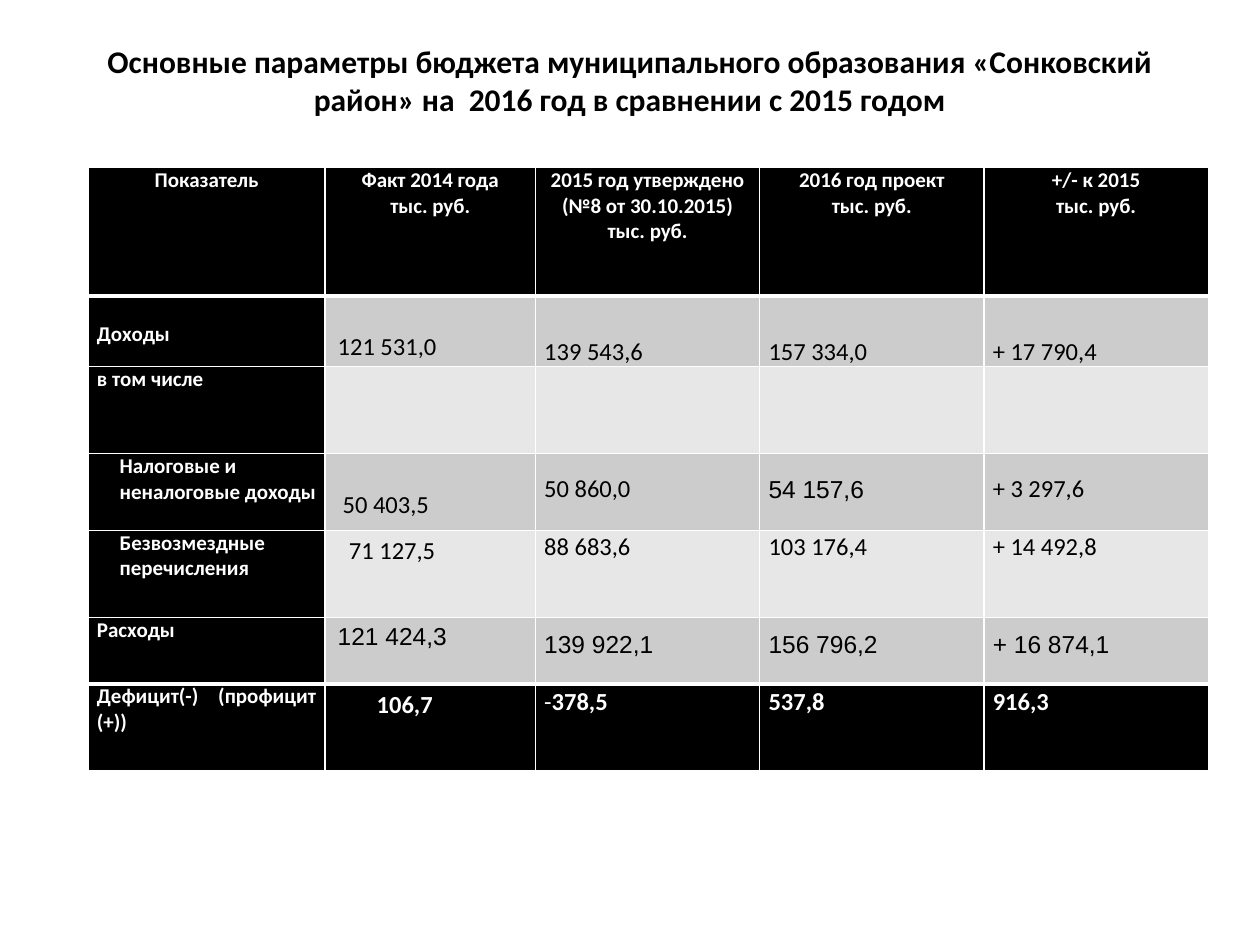
from lxml.etree import SubElement
from pptx import Presentation
from pptx.dml.color import RGBColor
from pptx.enum.text import MSO_ANCHOR as Anchor, PP_ALIGN as Align
from pptx.oxml.ns import qn
from pptx.util import Inches, Pt

COLORS = {"black": "000000", "white": "FFFFFF", "dark_band": "CCCCCC", "light_band": "E7E7E7"}

TITLE = ("Основные параметры бюджета муниципального образования "
         "«Сонковский район» на  2016 год в сравнении с 2015 годом")

# Each header cell is a list of paragraphs; "\n" is a line break
HEADERS = [
    ["Показатель"],
    ["Факт 2014 года\nтыс. руб."],
    ["2015 год утверждено (№8 от 30.10.2015)", "тыс. руб."],
    ["2016 год проект\nтыс. руб."],
    ["+/- к 2015\nтыс. руб."],
]
# Indicator, 2014 fact, 2015 approved, 2016 draft, change
BUDGET = [
    ["Доходы", "121 531,0", "139 543,6", "157 334,0", "+ 17 790,4"],
    ["в том числе", "", "", "", ""],
    ["Налоговые и \nненалоговые доходы", "50 403,5", "50 860,0", "54 157,6", "+ 3 297,6"],
    ["Безвозмездные \nперечисления", "71 127,5", "88 683,6", "103 176,4", "+ 14 492,8"],
    ["Расходы", "121 424,3", "139 922,1", "156 796,2", "+ 16 874,1"],
    ["Дефицит(-) (профицит (+))", "106,7", "378,5", "537,8", "916,3"],
]
COL_WIDTHS = [1.88, 1.67, 1.78, 1.78, 1.78]
ROW_HEIGHTS = [1.02, 0.56, 0.69, 0.61, 0.69, 0.53, 0.69]
TOTAL_ROW = len(BUDGET)
HEAVY_EDGES = {1, TOTAL_ROW}              # row edges drawn at 3 pt
SUBITEM_ROWS = {3, 4}
ARIAL_CELLS = {(3, 3)} | {(5, col) for col in range(1, 5)}
FACT_LEFT = {3: 0.14, 4: 0.19, 6: 0.41}   # left insets of the 2014 column
FACT_TOP = {1: 0.29, 3: 0.29}             # top insets of the 2014 column
PLAN_BOTTOM = {3: 0.21, 4: 0.44, 5: 0.2, 6: 0.43}  # bottom insets, other columns


def rgb(name):
    return RGBColor.from_string(COLORS[name])


def write(paragraph, text, size, color, bold, font="Calibri"):
    for index, line in enumerate(text.split("\n")):
        if index:
            paragraph.add_line_break()
        run = paragraph.add_run()
        run.text = line
        run.font.name, run.font.size, run.font.bold = font, Pt(size), bold
        run.font.color.rgb = rgb(color)


def set_insets(cell, left=0.07, top=0, right=0.07, bottom=0):
    cell.margin_left, cell.margin_top = Inches(left), Inches(top)
    cell.margin_right, cell.margin_bottom = Inches(right), Inches(bottom)


def style_cell(cell, row, fill):
    props = cell._tc.get_or_add_tcPr()
    widths = {"L": 1, "R": 1,
              "T": 3 if row in HEAVY_EDGES else 1,
              "B": 3 if row + 1 in HEAVY_EDGES else 1}
    for side, width in widths.items():
        line = SubElement(props, qn(f"a:ln{side}"), w=str(Pt(width)))
        SubElement(SubElement(line, qn("a:solidFill")), qn("a:srgbClr"), val=COLORS["white"])
    cell.fill.solid()
    cell.fill.fore_color.rgb = rgb(fill)


def add_dash_bullet(paragraph):
    props = paragraph._p.get_or_add_pPr()
    props.set("marL", "0")
    props.set("indent", "0")
    SubElement(props, qn("a:buFont"), typeface="Calibri")
    SubElement(props, qn("a:buChar"), char="-")


def fill_header(cell, paragraphs):
    style_cell(cell, 0, "black")
    set_insets(cell)
    for index, text in enumerate(paragraphs):
        paragraph = cell.text_frame.add_paragraph() if index else cell.text_frame.paragraphs[0]
        paragraph.alignment = Align.CENTER
        write(paragraph, text, 12, "white", True)


def fill_indicator(cell, row, text):
    style_cell(cell, row, "black")
    set_insets(cell, top=0.2 if row == 1 else 0)
    paragraph = cell.text_frame.paragraphs[0]
    if row in SUBITEM_ROWS:
        paragraph._p.get_or_add_pPr().set("marL", str(Inches(0.18)))
    else:
        paragraph.alignment = Align.JUSTIFY
    write(paragraph, text, 12, "white", True)


def fill_amount(cell, row, col, text):
    total = row == TOTAL_ROW
    style_cell(cell, row, "black" if total else "dark_band" if row % 2 else "light_band")
    if not text:
        return
    if col == 1:
        set_insets(cell, FACT_LEFT.get(row, 0.1), FACT_TOP.get(row, 0.05))
    else:
        set_insets(cell, bottom=PLAN_BOTTOM.get(row, 0))
        cell.vertical_anchor = Anchor.BOTTOM
    paragraph = cell.text_frame.paragraphs[0]
    if total and col == 2:
        add_dash_bullet(paragraph)
    write(paragraph, text, 14, "white" if total else "black", total,
          "Arial" if (row, col) in ARIAL_CELLS else "Calibri")


def place_title(slide, left, top, width, height):
    title = slide.shapes.title
    title.left, title.top = Inches(left), Inches(top)
    title.width, title.height = Inches(width), Inches(height)
    frame = title.text_frame
    frame.word_wrap = True
    frame.vertical_anchor = Anchor.MIDDLE
    frame.margin_bottom = Inches(0.1)
    paragraph = frame.paragraphs[0]
    paragraph.alignment = Align.CENTER
    write(paragraph, TITLE, 18, "black", True)


def place_budget_table(slide, left, top):
    table = slide.shapes.add_table(
        len(ROW_HEIGHTS), len(COL_WIDTHS), Inches(left), Inches(top),
        Inches(sum(COL_WIDTHS)), Inches(sum(ROW_HEIGHTS))).table
    for column, width in zip(table.columns, COL_WIDTHS):
        column.width = Inches(width)
    for row, height in zip(table.rows, ROW_HEIGHTS):
        row.height = Inches(height)

    # Header row
    for col, paragraphs in enumerate(HEADERS):
        fill_header(table.cell(0, col), paragraphs)
    # Budget rows
    for row, (indicator, *amounts) in enumerate(BUDGET, 1):
        fill_indicator(table.cell(row, 0), row, indicator)
        for col, amount in enumerate(amounts, 1):
            fill_amount(table.cell(row, col), row, col, amount)


def main():
    deck = Presentation()
    deck.slide_width, deck.slide_height = Inches(10), Inches(7.5)
    slide = deck.slides.add_slide(deck.slide_layouts[5])
    place_title(slide, 0.5, 0.23, 9, 0.86)
    place_budget_table(slide, 0.7, 1.33)
    deck.save("out.pptx")


if __name__ == "__main__":
    main()
